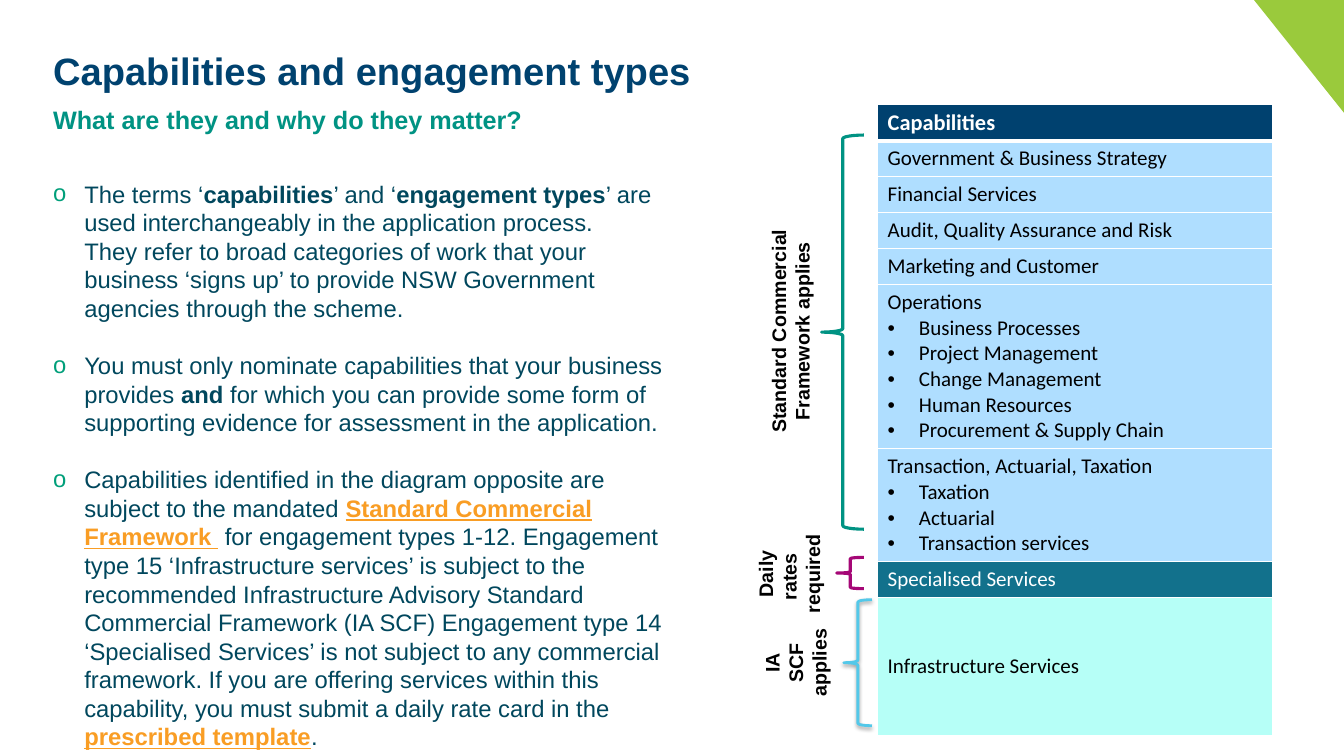
from lxml import etree
from pptx import Presentation
from pptx import util as u
from pptx.dml.color import RGBColor
from pptx.enum import shapes, text
from pptx.oxml import ns

NAVY = RGBColor(0x00, 0x42, 0x6F)
HEADER_BLUE = RGBColor(0x00, 0x41, 0x6F)
GREEN = RGBColor(0x00, 0x93, 0x83)
BULLET_GREEN = RGBColor(0x00, 0x9F, 0x7A)
BODY_TEAL = RGBColor(0x00, 0x47, 0x5D)
ORANGE = RGBColor(0xF9, 0x9D, 0x24)
LIME = RGBColor(0x9A, 0xCA, 0x3C)
PALE_BLUE = RGBColor(0xAF, 0xDE, 0xFF)
DEEP_TEAL = RGBColor(0x12, 0x71, 0x8C)
MINT = RGBColor(0xB6, 0xFF, 0xF7)
MAGENTA = RGBColor(0xA5, 0x07, 0x76)
SKY = RGBColor(0x53, 0xC8, 0xE9)
BLACK = RGBColor(0, 0, 0)
WHITE = RGBColor(0xFF, 0xFF, 0xFF)

# The slide is a grid of 100 columns by 100 rows
WIDTH, HEIGHT = u.Inches(13.33), u.Inches(7.5)
LEFT = 3.95
INDENT = u.Inches(0.31)

BODY = [
    ["The terms ‘", ("capabilities", "bold"), "’ and ‘", ("engagement types", "bold"),
     "’ are used interchangeably in the application process. \n"
     "They refer to broad categories of work that your business ‘signs up’ to provide "
     "NSW Government agencies through the scheme."],
    ["You must only nominate capabilities that your business provides ", ("and ", "bold"),
     "for which you can provide some form of supporting evidence for assessment in the "
     "application."],
    ["Capabilities identified in the diagram opposite are subject to the mandated ",
     ("Standard Commercial Framework ", "link"), (" ", "bold"),
     "for engagement types 1-12. Engagement type 15 ‘Infrastructure services’ is subject "
     "to the recommended Infrastructure Advisory Standard Commercial Framework (IA SCF) "
     "Engagement type 14 ‘Specialised Services’ is not subject to any commercial framework. "
     "If you are offering services within this capability, you must submit a daily rate "
     "card in the ", ("prescribed template", "link"), "."],
]

# Heading, sub-items, fill, font colour, height in rows
LINE_ROW = 4.75
CAPABILITIES = [
    ("Capabilities", [], HEADER_BLUE, WHITE, LINE_ROW),
    ("Government & Business Strategy", [], PALE_BLUE, BLACK, LINE_ROW),
    ("Financial Services", [], PALE_BLUE, BLACK, LINE_ROW),
    ("Audit, Quality Assurance and Risk", [], PALE_BLUE, BLACK, LINE_ROW),
    ("Marketing and Customer", [], PALE_BLUE, BLACK, LINE_ROW),
    ("Operations", ["Business Processes", "Project Management", "Change Management",
                    "Human Resources", "Procurement & Supply Chain"],
     PALE_BLUE, BLACK, 21.75),
    ("Transaction, Actuarial, Taxation", ["Taxation", "Actuarial", "Transaction services"],
     PALE_BLUE, BLACK, 14.95),
    ("Specialised Services", [], DEEP_TEAL, WHITE, LINE_ROW),
    ("Infrastructure Services", [], MINT, BLACK, 18.27),
]


def cols(count):
    return round(WIDTH * count / 100)


def rows(count):
    return round(HEIGHT * count / 100)


def area(left, top, width, height):
    return cols(left), rows(top), cols(width), rows(height)


def write(para, words, size, color, font="Arial", bold=False, underline=False):
    """Add text to a paragraph; a newline becomes a line break."""
    for number, line in enumerate(words.split("\n")):
        if number:
            para.add_line_break()
        span = para.add_run()
        span.text = line
        span.font.name, span.font.size = font, u.Pt(size)
        span.font.bold, span.font.underline = bold, underline
        span.font.color.rgb = color


def add_bullet(para, mark, color=None):
    props = para._p.get_or_add_pPr()
    props.set("marL", str(INDENT))
    props.set("indent", str(-INDENT))
    if color is not None:
        holder = etree.SubElement(props, ns.qn("a:buClr"))
        etree.SubElement(holder, ns.qn("a:srgbClr"), val=str(color))
    etree.SubElement(props, ns.qn("a:buFont"), typeface="Arial")
    etree.SubElement(props, ns.qn("a:buChar"), char=mark)


def add_box(page, place, margins=(0, 0, 0, 0)):
    box = page.shapes.add_textbox(*place)
    frame = box.text_frame
    frame.word_wrap = True
    (frame.margin_left, frame.margin_top,
     frame.margin_right, frame.margin_bottom) = map(u.Inches, margins)
    return box


def add_heading(page, place, words, size, color):
    write(add_box(page, place).text_frame.paragraphs[0], words, size, color, bold=True)


def add_body(page):
    frame = add_box(page, area(LEFT, 23.07, 47.55, 70.67), (0, 0.05, 0.1, 0.05)).text_frame
    looks = {"plain": {"color": BODY_TEAL},
             "bold": {"color": BODY_TEAL, "bold": True},
             "link": {"color": ORANGE, "bold": True, "underline": True}}
    for number, parts in enumerate(BODY):
        para = frame.add_paragraph() if number else frame.paragraphs[0]
        para.line_spacing = 1.0
        para.space_before = u.Pt(20.4 if number else 0)
        add_bullet(para, "o", BULLET_GREEN)
        for part in parts:
            words, look = (part, "plain") if isinstance(part, str) else part
            write(para, words, 17, **looks[look])


def add_borders(cell, bottom):
    props = cell._tc.get_or_add_tcPr()
    widths = {"a:lnL": 1, "a:lnR": 1, "a:lnT": 1, "a:lnB": bottom}
    for place, (tag, width) in enumerate(widths.items()):
        line = etree.Element(ns.qn(tag), w=str(u.Pt(width)))
        fill = etree.SubElement(line, ns.qn("a:solidFill"))
        etree.SubElement(fill, ns.qn("a:srgbClr"), val=str(WHITE))
        props.insert(place, line)


def add_capabilities(page):
    total = sum(entry[-1] for entry in CAPABILITIES)
    place = area(65.3, 13.87, 29.4, total)
    table = page.shapes.add_table(len(CAPABILITIES), 1, *place).table
    table.horz_banding = False
    for number, (heading, items, fill, color, height) in enumerate(CAPABILITIES):
        is_header = number == 0
        table.rows[number].height = rows(height)
        cell = table.cell(number, 0)
        cell.vertical_anchor = text.MSO_ANCHOR.MIDDLE
        cell.margin_top = cell.margin_bottom = u.Inches(0.04 if is_header else 0.05)
        cell.fill.solid()
        cell.fill.fore_color.rgb = fill
        add_borders(cell, 3 if is_header else 1)
        write(cell.text_frame.paragraphs[0], heading, 16 if is_header else 15, color,
              font="Calibri", bold=is_header)
        for item in items:
            para = cell.text_frame.add_paragraph()
            add_bullet(para, "•")
            write(para, item, 15, color, font="Calibri")


def add_brace(page, place, color, width=2.25, curve=0.0833):
    brace = page.shapes.add_shape(shapes.MSO_SHAPE.LEFT_BRACE, *place)
    brace.shadow.inherit = False
    brace.fill.background()
    brace.line.color.rgb = color
    brace.line.width = u.Pt(width)
    brace.adjustments[0] = curve
    return brace


def add_soft_shadow(shape):
    effects = shape._element.spPr.find(ns.qn("a:effectLst"))
    shadow = etree.SubElement(effects, ns.qn("a:outerShdw"), blurRad=str(u.Pt(3.1)),
                              dist=str(u.Pt(1.6)), dir="5400000", rotWithShape="0")
    color = etree.SubElement(shadow, ns.qn("a:srgbClr"), val=str(BLACK))
    etree.SubElement(color, ns.qn("a:alpha"), val="38000")


def add_label(page, center, middle, width, height, lines):
    """Add a label that reads upwards, centred on a grid point."""
    place = area(center - width / 2, middle - height / 2, width, height)
    box = add_box(page, place, (0.1, 0.05, 0.1, 0.05))
    box.rotation = 270
    for number, line in enumerate(lines):
        frame = box.text_frame
        para = frame.add_paragraph() if number else frame.paragraphs[0]
        para.alignment = text.PP_ALIGN.CENTER
        write(para, line, 14, BLACK, bold=True)


def add_corner(page):
    builder = page.shapes.build_freeform(cols(100), 0)
    builder.add_line_segments([(cols(93.3), 0), (cols(100), rows(14.93))], close=True)
    corner = builder.convert_to_shape()
    corner.shadow.inherit = False
    corner.fill.solid()
    corner.fill.fore_color.rgb = LIME
    corner.line.fill.background()


def main():
    deck = Presentation()
    deck.slide_width, deck.slide_height = WIDTH, HEIGHT
    page = deck.slides.add_slide(deck.slide_layouts[6])

    # Headings and explanation
    add_corner(page)
    add_heading(page, area(LEFT, 6.27, 61.35, 9.33),
                "Capabilities and engagement types", 27.2, NAVY)
    add_heading(page, area(LEFT, 13.8, 88.95, 4),
                "What are they and why do they matter?", 18, GREEN)
    add_body(page)

    # Capabilities with the framework that applies to each group
    add_capabilities(page)
    add_brace(page, area(61.13, 17.87, 3.15, 52.13), GREEN)
    add_label(page, 58.8, 43.8, 21.15, 7.6, ["Standard Commercial Framework applies"])
    add_brace(page, area(62.25, 73.73, 2.03, 4.13), MAGENTA, curve=0.045)
    add_label(page, 58.73, 75.93, 7.5, 10.8, ["Daily rates \nrequired"])
    add_soft_shadow(add_brace(page, area(62.78, 79.33, 2.1, 16.67), SKY, width=2))
    add_label(page, 59.21, 87.67, 7.13, 10.8, ["IA", "SCF", "applies"])

    deck.save("out.pptx")


if __name__ == "__main__":
    main()
